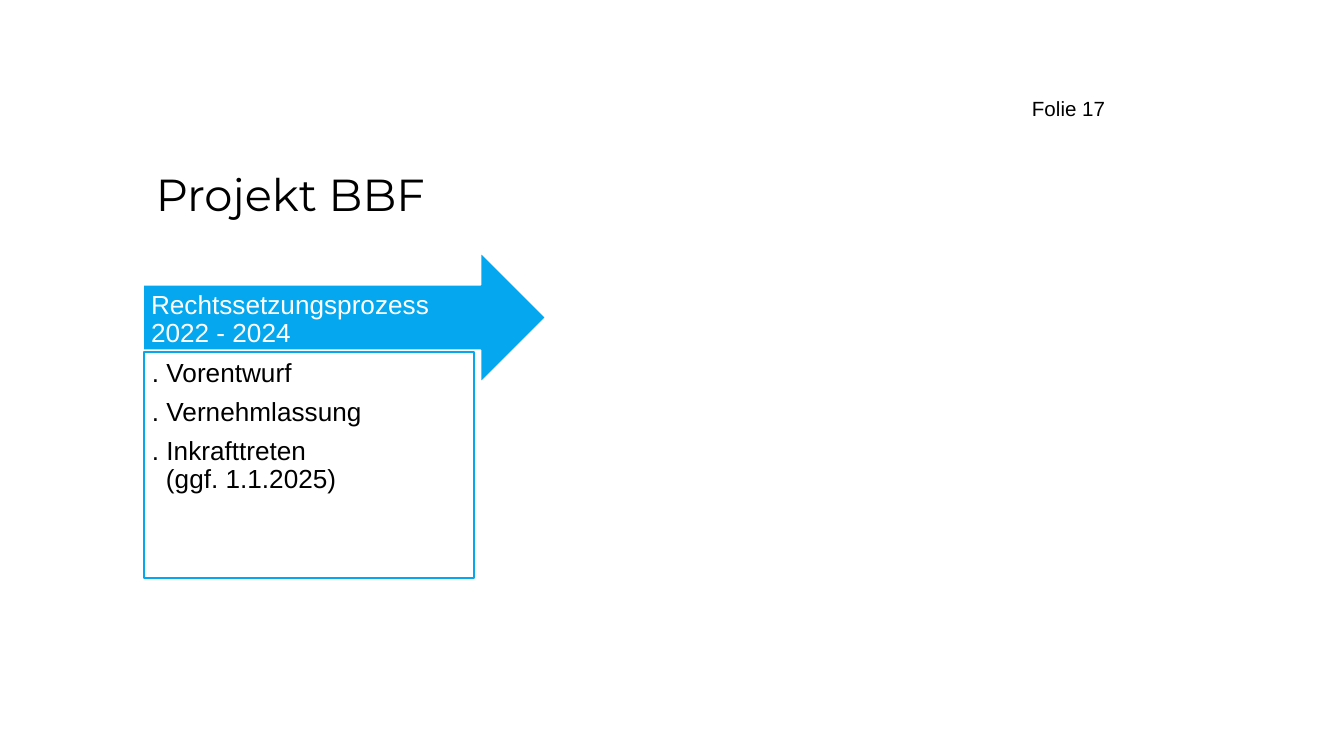
from pptx import Presentation
from pptx.dml.color import RGBColor
from pptx.enum.shapes import MSO_SHAPE as Shape
from pptx.enum.text import MSO_ANCHOR as Anchor, PP_ALIGN as Align
from pptx.util import Emu, Pt

EMU_PER_PX = 914400 / 134.4
BLACK = RGBColor(0x00, 0x00, 0x00)
WHITE = RGBColor(0xFF, 0xFF, 0xFF)
BLUE = RGBColor(0x05, 0xA8, 0xEE)

STEPS = [
    [". Vorentwurf"],
    [". Vernehmlassung"],
    [". Inkrafttreten", "(ggf. 1.1.2025)"],
]


def px(length):
    return Emu(round(length * EMU_PER_PX))


def add_block(page, kind, place, fill, line):
    block = page.shapes.add_shape(kind, *map(px, place))
    block.shadow.inherit = False
    block.fill.solid()
    block.fill.fore_color.rgb = fill
    block.line.color.rgb = line
    block.line.width = Pt(1)
    return block


def prepare_frame(shape, insets):
    """Wrap text from the top, with insets in px: left, top, right, bottom."""
    frame = shape.text_frame
    frame.word_wrap = True
    frame.vertical_anchor = Anchor.TOP
    (frame.margin_left, frame.margin_top,
     frame.margin_right, frame.margin_bottom) = map(px, insets)
    return frame


def write_lines(para, lines, size, color=BLACK, font="Arial"):
    para.alignment = Align.LEFT
    for index, line in enumerate(lines):
        if index:
            para.add_line_break()
        span = para.add_run()
        span.text = line
        span.font.size = Pt(size)
        span.font.name = font
        span.font.color.rgb = color


def set_tight_spacing(para):
    para.line_spacing = 0.9
    para.space_after = Pt(5.6)


def hang_indent(para, width):
    properties = para._p.get_or_add_pPr()
    properties.set("marL", str(px(width)))
    properties.set("indent", str(-px(width)))


def add_label(page, place, text, size, color=BLACK, font="Arial",
              insets=(13, 7, 13, 7)):
    box = page.shapes.add_textbox(*map(px, place))
    para = prepare_frame(box, insets).paragraphs[0]
    write_lines(para, [text], size, color, font)
    return para


def add_steps(page, place):
    block = add_block(page, Shape.RECTANGLE, place, WHITE, BLUE)
    frame = prepare_frame(block, (8, 8, 8, 8))
    for index, lines in enumerate(STEPS):
        para = frame.add_paragraph() if index else frame.paragraphs[0]
        hang_indent(para, 14)
        set_tight_spacing(para)
        write_lines(para, lines, 14)


def main():
    deck = Presentation()
    deck.slide_width, deck.slide_height = px(1344), px(756)
    page = deck.slides.add_slide(deck.slide_layouts[6])

    add_label(page, (1019, 89, 202, 39), "Folie 17", 11)
    add_label(page, (143, 160, 1142, 59), "Projekt BBF", 24, font="Montserrat")

    add_block(page, Shape.RIGHT_ARROW, (143, 252, 403, 131), BLUE, WHITE)
    phase = add_label(page, (143, 284, 370, 66),
                      "Rechtssetzungsprozess 2022 - 2024", 14, WHITE,
                      insets=(8, 8, 38, 22))
    set_tight_spacing(phase)
    add_steps(page, (144, 352, 330, 226))

    deck.save("out.pptx")


if __name__ == "__main__":
    main()
